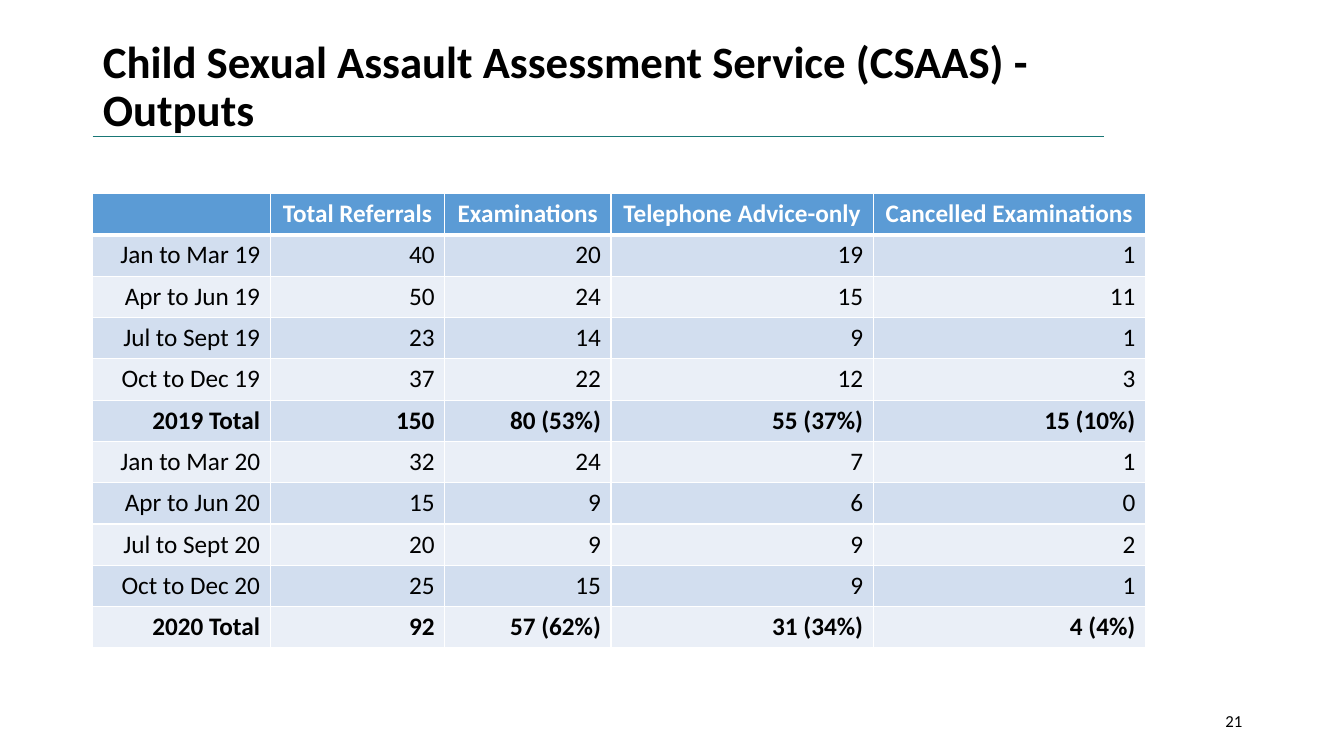
from lxml.etree import SubElement
from pptx import Presentation
from pptx.dml.color import RGBColor
from pptx.enum.shapes import MSO_CONNECTOR
from pptx.enum.text import MSO_ANCHOR, MSO_AUTO_SIZE, PP_ALIGN
from pptx.oxml.ns import qn
from pptx.util import Emu, Pt

PX = 9144
BLACK = RGBColor(0x00, 0x00, 0x00)
WHITE = RGBColor(0xFF, 0xFF, 0xFF)
TEAL = RGBColor(0x19, 0x77, 0x76)
HEADER_BLUE = RGBColor(0x5B, 0x9B, 0xD5)
BANDS = (RGBColor(0xEA, 0xEF, 0xF7), RGBColor(0xD2, 0xDE, 0xEF))

COLUMN_WIDTHS = (176, 173, 165, 260, 270)
ROW_HEIGHT = 41
ROWS = (
    ("", "Total Referrals", "Examinations", "Telephone Advice-only", "Cancelled Examinations"),
    ("Jan to Mar 19", "40", "20", "19", "1"),
    ("Apr to Jun 19", "50", "24", "15", "11"),
    ("Jul to Sept 19", "23", "14", "9", "1"),
    ("Oct to Dec 19", "37", "22", "12", "3"),
    ("2019 Total", "150", "80 (53%)", "55 (37%)", "15 (10%)"),
    ("Jan to Mar 20", "32", "24", "7", "1"),
    ("Apr to Jun 20", "15", "9", "6", "0"),
    ("Jul to Sept 20", "20", "9", "9", "2"),
    ("Oct to Dec 20", "25", "15", "9", "1"),
    ("2020 Total", "92", "57 (62%)", "31 (34%)", "4 (4%)"),
)


def px(*lengths):
    """Turn px lengths into EMU."""
    return [Emu(n * PX) for n in lengths]


def set_text(tf, text, size, color=BLACK, bold=False, align=PP_ALIGN.LEFT):
    """Write one formatted paragraph and return it."""
    p = tf.paragraphs[0]
    p.alignment = align
    r = p.add_run()
    r.text = text
    r.font.color.rgb = color
    for name, value in {"name": "Calibri", "size": Pt(size), "bold": bold}.items():
        setattr(r.font, name, value)
    return p


def set_frame(tf):
    """Give a text frame wrapping, middle anchoring and a fixed size."""
    values = {"word_wrap": True, "vertical_anchor": MSO_ANCHOR.MIDDLE,
              "auto_size": MSO_AUTO_SIZE.NONE}
    for name, value in values.items():
        setattr(tf, name, value)


def add_title(s, text, x, y, w, h):
    """Place the slide title with a rule along the bottom of its box."""
    rule = s.shapes.add_connector(MSO_CONNECTOR.STRAIGHT, *px(x, y + h, x + w, y + h))
    rule.line.color.rgb = TEAL
    rule.line.width = Pt(0.5)
    SubElement(rule._element.spPr, qn("a:effectLst"))
    sp = s.shapes.title
    sp.left, sp.top, sp.width, sp.height = px(x, y, w, h)
    set_frame(sp.text_frame)
    set_text(sp.text_frame, text, 32, bold=True).line_spacing = 0.9


def set_borders(cell, top, bottom):
    """Draw white borders of the given top and bottom widths in points."""
    tcPr = cell._tc.get_or_add_tcPr()
    for side, width in {"L": 1, "R": 1, "T": top, "B": bottom}.items():
        ln = SubElement(tcPr, qn(f"a:ln{side}"), w=str(Pt(width)))
        fill = SubElement(ln, qn("a:solidFill"))
        SubElement(fill, qn("a:srgbClr"), val=str(WHITE))


def add_outputs_table(s, x, y):
    """Place the banded table of quarterly outputs and yearly totals."""
    box = px(x, y, sum(COLUMN_WIDTHS), ROW_HEIGHT * len(ROWS))
    table = s.shapes.add_table(len(ROWS), len(COLUMN_WIDTHS), *box).table
    for column, width in zip(table.columns, px(*COLUMN_WIDTHS)):
        column.width = width
    for i, row in enumerate(ROWS):
        table.rows[i].height = Emu(ROW_HEIGHT * PX)
        header = i == 0
        bold = header or row[0].endswith("Total")
        align = PP_ALIGN.CENTER if header else PP_ALIGN.RIGHT
        for cell, text in zip(table.rows[i].cells, row):
            set_borders(cell, 3 if i == 1 else 1, 3 if header else 1)
            cell.fill.solid()
            cell.fill.fore_color.rgb = HEADER_BLUE if header else BANDS[i % 2]
            if text:
                set_text(cell.text_frame, text, 18, WHITE if header else BLACK, bold, align)


def add_page_number(s, number, x, y, w, h):
    """Place the page number at the right of its box."""
    tf = s.shapes.add_textbox(*px(x, y, w, h)).text_frame
    set_frame(tf)
    set_text(tf, number, 12, align=PP_ALIGN.RIGHT)


def main():
    """Build the slide and save it."""
    prs = Presentation()
    prs.slide_width, prs.slide_height = px(1333, 750)
    s = prs.slides.add_slide(prs.slide_layouts[5])
    add_title(s, "Child Sexual Assault Assessment Service (CSAAS) - Outputs", 92, 40, 1003, 95)
    add_outputs_table(s, 92, 192)
    add_page_number(s, "21", 942, 695, 300, 40)
    prs.save("out.pptx")


if __name__ == "__main__":
    main()
